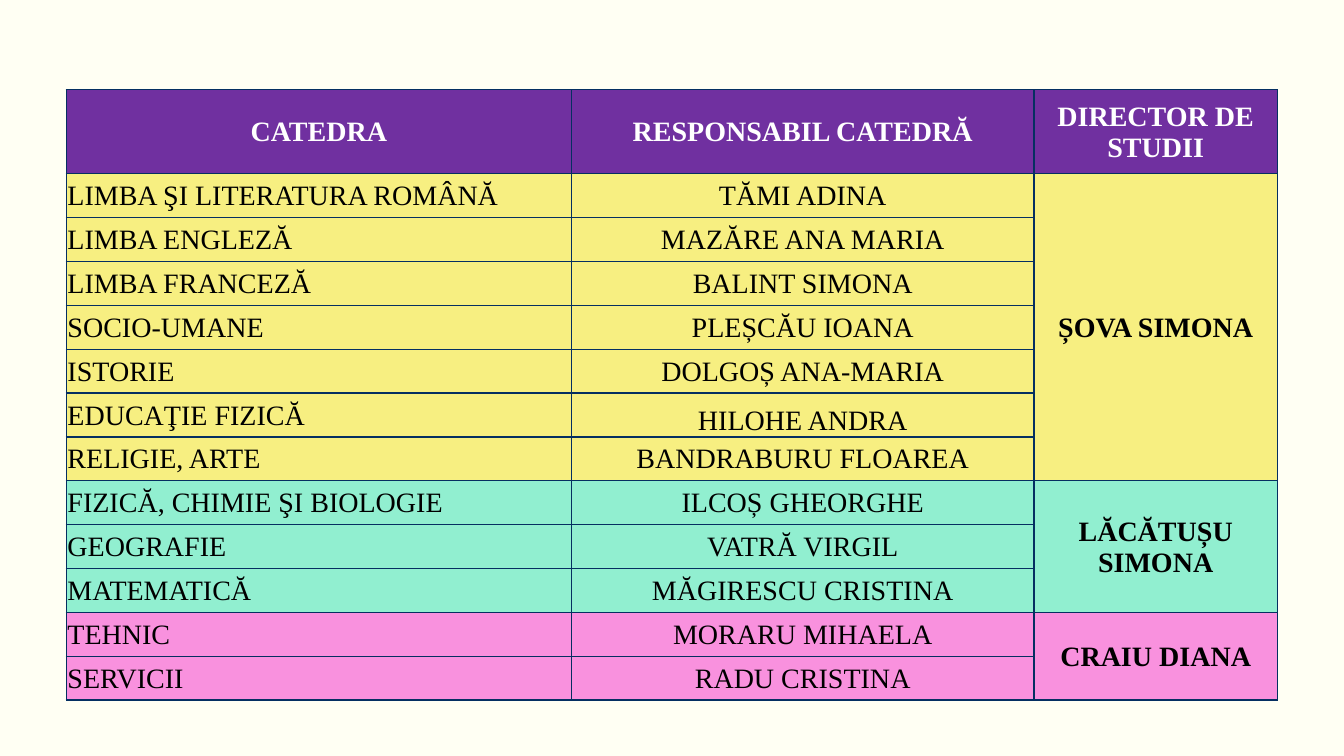
from dataclasses import dataclass

from lxml import etree
from pptx import Presentation
from pptx.dml.color import RGBColor
from pptx.enum.text import MSO_ANCHOR, PP_ALIGN
from pptx.oxml.ns import qn
from pptx.table import Table, _Cell
from pptx.util import Cm, Pt

LEFT, CENTER = PP_ALIGN.LEFT, PP_ALIGN.CENTER
MIDDLE, BOTTOM = MSO_ANCHOR.MIDDLE, MSO_ANCHOR.BOTTOM

CREAM = RGBColor(0xFF, 0xFF, 0xF3)
PURPLE = RGBColor(0x70, 0x30, 0xA0)
YELLOW = RGBColor(0xF7, 0xEF, 0x81)
MINT = RGBColor(0x91, 0xEF, 0xD0)
PINK = RGBColor(0xF9, 0x91, 0xDE)
NAVY = RGBColor(0x05, 0x2F, 0x61)
WHITE = RGBColor(0xFF, 0xFF, 0xFF)
BLACK = RGBColor(0x00, 0x00, 0x00)

FONT = "Times New Roman"
WIDTHS = (Cm(12.73), Cm(11.66), Cm(6.13))
HEAD_H = Cm(2.12)
BODY_H = Cm(13.26)
HEADS = ("CATEDRA", "RESPONSABIL CATEDRĂ", "DIRECTOR DE STUDII")


@dataclass
class Chair:
    name: str
    lead: str
    anchor: MSO_ANCHOR = MIDDLE


@dataclass
class Group:
    head: str
    fill: RGBColor
    chairs: list[Chair]


GROUPS = [
    Group("ȘOVA SIMONA", YELLOW, [
        Chair("LIMBA ŞI LITERATURA ROMÂNĂ", "TĂMI ADINA"),
        Chair("LIMBA ENGLEZĂ", "MAZĂRE ANA MARIA"),
        Chair("LIMBA FRANCEZĂ", "BALINT SIMONA"),
        Chair("SOCIO-UMANE", "PLEȘCĂU IOANA"),
        Chair("ISTORIE", "DOLGOȘ ANA-MARIA"),
        Chair("EDUCAŢIE FIZICĂ", "HILOHE ANDRA", BOTTOM),
        Chair("RELIGIE, ARTE", "BANDRABURU FLOAREA"),
    ]),
    Group("LĂCĂTUȘU SIMONA", MINT, [
        Chair("FIZICĂ, CHIMIE ŞI BIOLOGIE", "ILCOȘ GHEORGHE"),
        Chair("GEOGRAFIE", "VATRĂ VIRGIL"),
        Chair("MATEMATICĂ", "MĂGIRESCU CRISTINA"),
    ]),
    Group("CRAIU DIANA", PINK, [
        Chair("TEHNIC", "MORARU MIHAELA"),
        Chair("SERVICII", "RADU CRISTINA"),
    ]),
]


def add_edges(cell: _Cell) -> None:
    props = cell._tc.get_or_add_tcPr()
    for side in ("lnL", "lnR", "lnT", "lnB"):
        line = etree.SubElement(props, qn(f"a:{side}"), w=str(Pt(1)))
        fill = etree.SubElement(line, qn("a:solidFill"))
        etree.SubElement(fill, qn("a:srgbClr"), val=str(NAVY))


def style_cell(cell: _Cell, fill: RGBColor) -> None:
    """Set the edges, fill and insets that every cell shares."""
    add_edges(cell)
    cell.fill.solid()
    cell.fill.fore_color.rgb = fill
    cell.margin_left = cell.margin_right = cell.margin_top = Cm(0.03)
    cell.margin_bottom = 0


def write_cell(cell: _Cell, text: str, color: RGBColor = BLACK, bold: bool = False,
               align: PP_ALIGN = CENTER, anchor: MSO_ANCHOR = MIDDLE) -> None:
    cell.text = text
    cell.vertical_anchor = anchor
    para = cell.text_frame.paragraphs[0]
    para.alignment = align
    font = para.font
    font.name, font.size, font.bold = FONT, Pt(20), bold
    font.color.rgb = color


def fill_group(table: Table, top: int, group: Group) -> None:
    for row, chair in enumerate(group.chairs, top):
        for col in range(len(HEADS)):
            style_cell(table.cell(row, col), group.fill)
        write_cell(table.cell(row, 0), chair.name, align=LEFT)
        write_cell(table.cell(row, 1), chair.lead, anchor=chair.anchor)
    first = table.cell(top, 2)
    first.merge(table.cell(top + len(group.chairs) - 1, 2))
    write_cell(first, group.head, bold=True)


def main() -> None:
    deck = Presentation()
    deck.slide_width, deck.slide_height = Cm(33.87), Cm(19.05)
    slide = deck.slides.add_slide(deck.slide_layouts[6])
    back = slide.background.fill
    back.solid()
    back.fore_color.rgb = CREAM

    count = sum(len(group.chairs) for group in GROUPS)
    table = slide.shapes.add_table(
        count + 1, len(HEADS), Cm(1.67), Cm(2.26), sum(WIDTHS), HEAD_H + BODY_H
    ).table
    for column, width in zip(table.columns, WIDTHS):
        column.width = width
    for row in table.rows:
        row.height = BODY_H // count
    table.rows[0].height = HEAD_H

    for col, text in enumerate(HEADS):
        style_cell(table.cell(0, col), PURPLE)
        write_cell(table.cell(0, col), text, WHITE, bold=True)
    top = 1
    for group in GROUPS:
        fill_group(table, top, group)
        top += len(group.chairs)
    deck.save("out.pptx")


if __name__ == "__main__":
    main()
